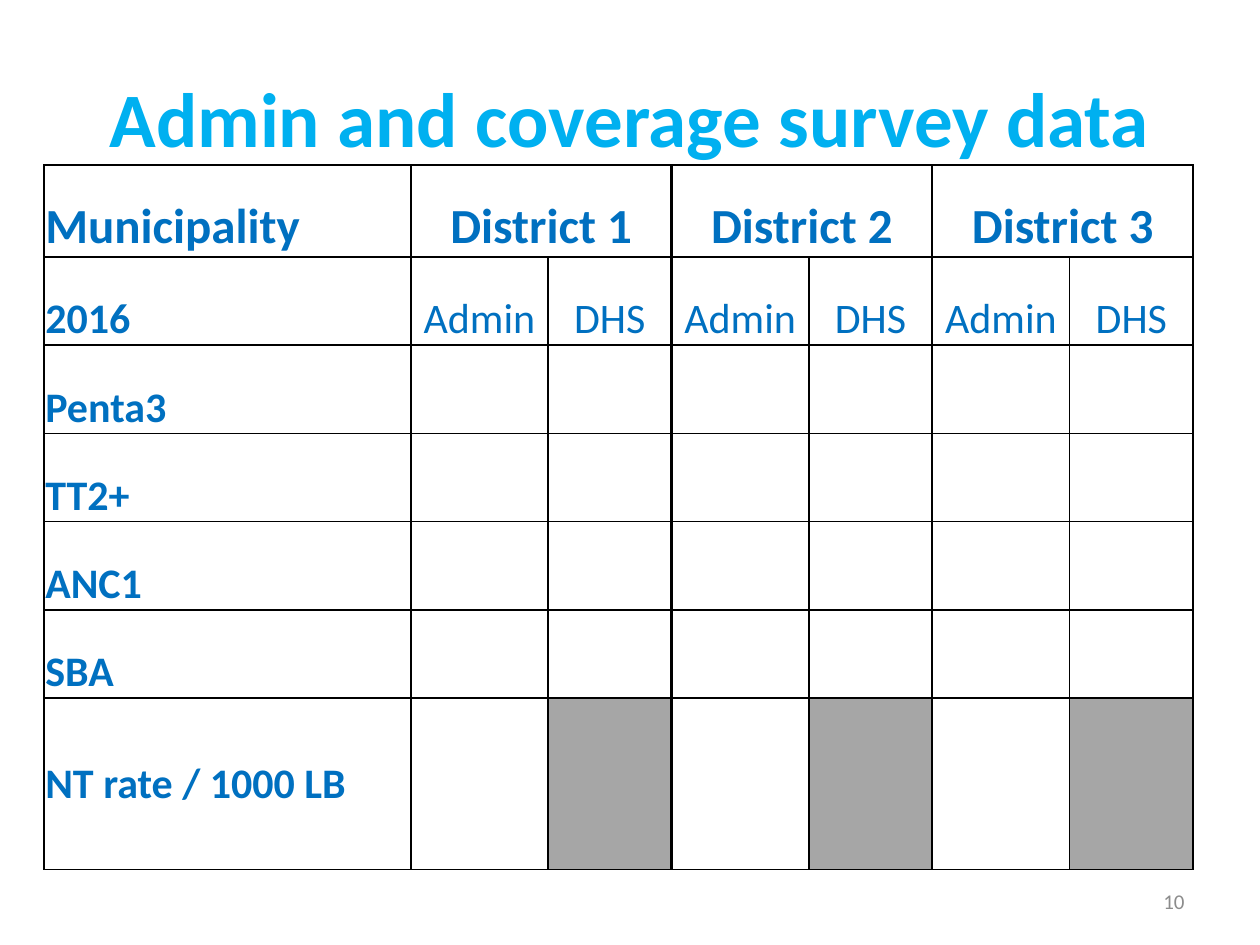
from lxml import etree
from pptx import Presentation
from pptx.dml.color import RGBColor
from pptx.enum.text import MSO_ANCHOR, PP_ALIGN
from pptx.oxml.ns import qn
from pptx.util import Inches, Pt

LEFT, CENTER, RIGHT = PP_ALIGN.LEFT, PP_ALIGN.CENTER, PP_ALIGN.RIGHT
MIDDLE, BOTTOM = MSO_ANCHOR.MIDDLE, MSO_ANCHOR.BOTTOM
FONT = "Calibri"
SKY = RGBColor(0x00, 0xB0, 0xF0)
BLUE = RGBColor(0x00, 0x70, 0xC0)
PAGE_GRAY = RGBColor(0x8C, 0x8C, 0x8C)
BLOCKED_GRAY = RGBColor(0xA6, 0xA6, 0xA6)
BLACK = RGBColor(0x00, 0x00, 0x00)

DISTRICTS = ["District 1", "District 2", "District 3"]
SOURCES = ["Admin", "DHS"]
INDICATORS = ["Penta3", "TT2+", "ANC1", "SBA", "NT rate / 1000 LB"]
COLUMN_WIDTHS = [2.91] + [1.09, 0.98] * len(DISTRICTS)
ROW_HEIGHTS = [0.73] + [0.7] * 5 + [1.36]


def write(frame, text, size, color, bold=False, align=LEFT):
    """Put one formatted paragraph into a text frame."""
    frame.text = text
    paragraph = frame.paragraphs[0]
    paragraph.alignment = align
    font = paragraph.runs[0].font
    font.name, font.size, font.bold = FONT, Pt(size), bold
    font.color.rgb = color


def add_label(slide, box, text, size, color, bold, align):
    """Add a vertically centred text box."""
    frame = slide.shapes.add_textbox(*map(Inches, box)).text_frame
    frame.word_wrap = True
    frame.vertical_anchor = MIDDLE
    write(frame, text, size, color, bold, align)


def set_borders(cell, column):
    """Rule a cell, with heavier lines between the districts."""
    starts_district = column % 2 == 1
    widths = {
        "a:lnL": 1.5 if starts_district else 1,
        "a:lnR": 1 if starts_district else 1.5,
        "a:lnT": 1,
        "a:lnB": 1,
    }
    if column == 0:
        widths["a:lnL"] = 1
    properties = cell._tc.get_or_add_tcPr()
    for tag, width in widths.items():
        line = etree.SubElement(properties, qn(tag), w=str(Pt(width)))
        fill = etree.SubElement(line, qn("a:solidFill"))
        etree.SubElement(fill, qn("a:srgbClr"), val=str(BLACK))


def write_cell(cell, text, size, bold=True, align=LEFT, anchor=BOTTOM):
    """Write a cell with tight margins."""
    cell.margin_left = cell.margin_right = cell.margin_top = Inches(0.01)
    cell.margin_bottom = 0
    cell.vertical_anchor = anchor
    write(cell.text_frame, text, size, BLUE, bold, align)


def add_coverage_table(slide):
    """Add the empty coverage grid by district and data source."""
    frame = slide.shapes.add_table(
        len(ROW_HEIGHTS), len(COLUMN_WIDTHS),
        Inches(0.35), Inches(1.31), Inches(sum(COLUMN_WIDTHS)), Inches(sum(ROW_HEIGHTS)))
    table = frame.table
    table.first_row = table.horz_banding = False
    for column, width in zip(table.columns, COLUMN_WIDTHS):
        column.width = Inches(width)
    for row, height in zip(table.rows, ROW_HEIGHTS):
        row.height = Inches(height)

    last_row = len(ROW_HEIGHTS) - 1
    for r, row in enumerate(table.rows):
        for c, cell in enumerate(row.cells):
            set_borders(cell, c)
            if r == last_row and c > 0 and c % 2 == 0:
                cell.fill.solid()
                cell.fill.fore_color.rgb = BLOCKED_GRAY
            else:
                cell.fill.background()

    write_cell(table.cell(0, 0), "Municipality", 28)
    write_cell(table.cell(1, 0), "2016", 24)
    for d, district in enumerate(DISTRICTS):
        first = 1 + d * len(SOURCES)
        heading = table.cell(0, first)
        heading.merge(table.cell(0, first + 1))
        write_cell(heading, district, 28, align=CENTER)
        for s, source in enumerate(SOURCES):
            write_cell(table.cell(1, first + s), source, 24, False, CENTER)
    for r, indicator in enumerate(INDICATORS, start=2):
        anchor = MIDDLE if r == last_row else BOTTOM
        write_cell(table.cell(r, 0), indicator, 24, anchor=anchor)


def main():
    """Build and save the slide."""
    deck = Presentation()
    deck.slide_width, deck.slide_height = Inches(10), Inches(7.5)
    slide = deck.slides.add_slide(deck.slide_layouts[6])
    add_label(slide, (0.5, 0.3, 9, 1.25), "Admin and coverage survey data", 44, SKY, True, CENTER)
    add_label(slide, (7.17, 6.95, 2.33, 0.4), "10", 12, PAGE_GRAY, False, RIGHT)
    add_coverage_table(slide)
    deck.save("out.pptx")


if __name__ == "__main__":
    main()
